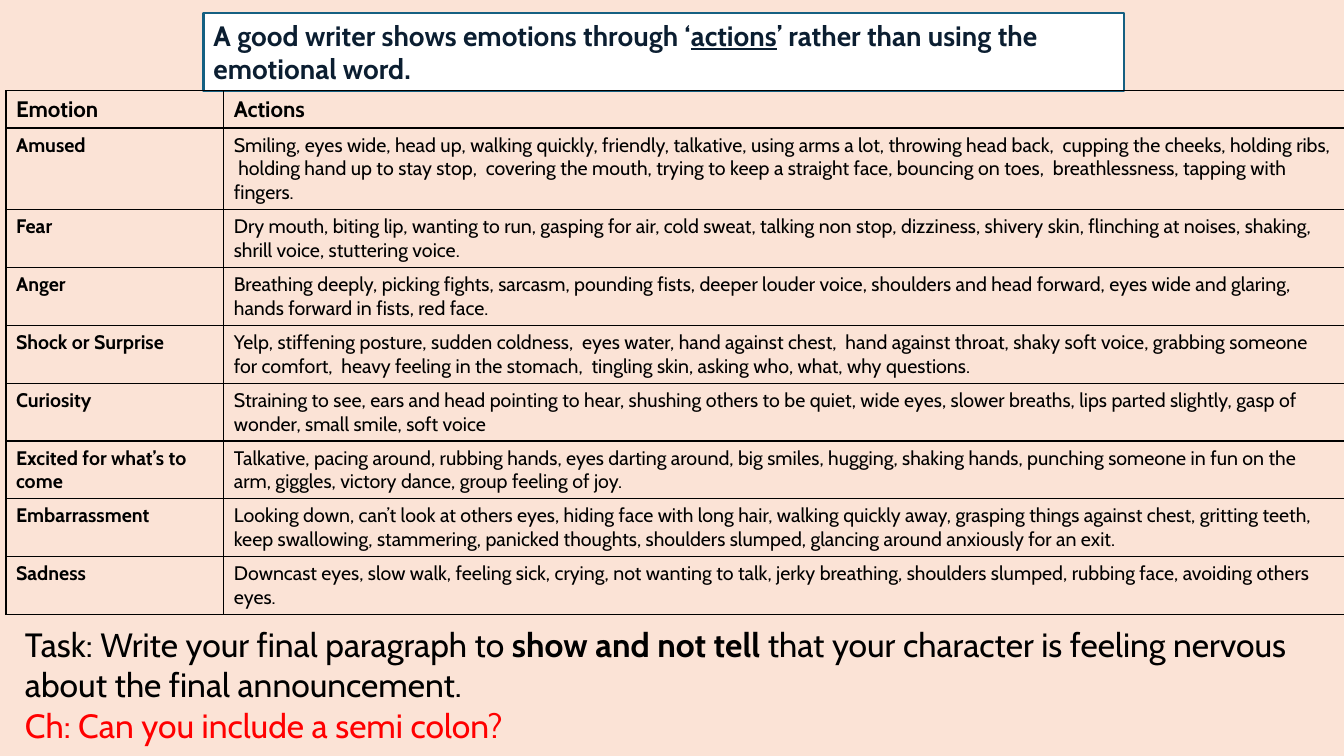
from dataclasses import dataclass

import pptx
import pptx.dml.color
import pptx.enum.shapes
import pptx.enum.text
import pptx.oxml
import pptx.oxml.ns
import pptx.util
from pptx.util import Cm


@dataclass(frozen=True)
class Theme:
    font: str = "Cabin"
    background: str = "FBE3D6"
    banner_fill: str = "FFFFFF"
    banner_line: str = "156082"
    banner_text: str = "0B1E31"
    text: str = "000000"
    challenge: str = "FF0000"
    banner_size: int = 20
    header_size: int = 16
    cell_size: int = 14
    task_size: int = 24


THEME = Theme()

EMOTIONS = [
    ("Amused", "Smiling, eyes wide, head up, walking quickly, friendly, talkative, using arms a lot, "
     "throwing head back,  cupping the cheeks, holding ribs,  holding hand up to stay stop,  covering the mouth, "
     "trying to keep a straight face, bouncing on toes,  breathlessness, tapping with fingers."),
    ("Fear", "Dry mouth, biting lip, wanting to run, gasping for air, cold sweat, talking non stop, dizziness, "
     "shivery skin, flinching at noises, shaking, shrill voice, stuttering voice."),
    ("Anger", "Breathing deeply, picking fights, sarcasm, pounding fists, deeper louder voice, "
     "shoulders and head forward, eyes wide and glaring,  hands forward in fists, red face."),
    ("Shock or Surprise", "Yelp, stiffening posture, sudden coldness,  eyes water, hand against chest,  "
     "hand against throat, shaky soft voice, grabbing someone for comfort,  heavy feeling in the stomach,  "
     "tingling skin, asking who, what, why questions."),
    ("Curiosity", "Straining to see, ears and head pointing to hear, shushing others to be quiet, wide eyes, "
     "slower breaths, lips parted slightly, gasp of wonder, small smile, soft voice"),
    ("Excited for what’s to come", "Talkative, pacing around, rubbing hands, eyes darting around, big smiles, "
     "hugging, shaking hands, punching someone in fun on the arm, giggles, victory dance, group feeling of joy."),
    ("Embarrassment", "Looking down, can’t look at others eyes, hiding face with long hair, walking quickly away, "
     "grasping things against chest, gritting teeth, keep swallowing, stammering, panicked thoughts, "
     "shoulders slumped, glancing around anxiously for an exit."),
    ("Sadness", "Downcast eyes, slow walk, feeling sick, crying, not wanting to talk, jerky breathing, "
     "shoulders slumped, rubbing face, avoiding others eyes."),
]


def rgb(color):
    return pptx.dml.color.RGBColor.from_string(color)


def format_run(run, size, color, bold=False, underline=False):
    run.font.name = THEME.font
    run.font.size = pptx.util.Pt(size)
    run.font.color.rgb = rgb(color)
    run.font.bold = bold
    run.font.underline = underline


def add_run(paragraph, text, size, color, bold=False, underline=False):
    run = paragraph.add_run()
    run.text = text
    format_run(run, size, color, bold, underline)


def draw_banner(slide, left, top, width, height):
    banner = slide.shapes.add_shape(
        pptx.enum.shapes.MSO_SHAPE.RECTANGLE, left, top, width, height)
    banner.shadow.inherit = False
    banner.fill.solid()
    banner.fill.fore_color.rgb = rgb(THEME.banner_fill)
    banner.line.color.rgb = rgb(THEME.banner_line)
    banner.line.width = pptx.util.Pt(1.5)
    frame = banner.text_frame
    frame.word_wrap = True
    frame.vertical_anchor = pptx.enum.text.MSO_ANCHOR.TOP
    paragraph = frame.paragraphs[0]
    paragraph.alignment = pptx.enum.text.PP_ALIGN.LEFT
    for text, underline in [
        ("A good writer shows emotions through ‘", False),
        ("actions", True),
        ("’ rather than using the emotional word.", False),
    ]:
        add_run(paragraph, text, THEME.banner_size, THEME.banner_text, True, underline)


def add_cell_borders(cell):
    properties = cell._tc.get_or_add_tcPr()
    for position, side in enumerate(("lnL", "lnR", "lnT", "lnB")):
        properties.insert(position, pptx.oxml.parse_xml(
            f'<a:{side} {pptx.oxml.ns.nsdecls("a")} w="12700"><a:solidFill>'
            f'<a:srgbClr val="{THEME.text}"/></a:solidFill></a:{side}>'))


def draw_emotion_table(slide, left, top, width, height):
    rows = [("Emotion", "Actions")] + EMOTIONS
    table = slide.shapes.add_table(len(rows), 2, left, top, width, height).table
    table.first_row = False
    table.horz_banding = False
    emotion_width = Cm(5.49)
    table.columns[0].width = emotion_width
    table.columns[1].width = width - emotion_width
    header_height, first_height = Cm(0.91), Cm(2.04)
    other_height = (height - header_height - first_height) // (len(rows) - 2)
    row_heights = [header_height, first_height] + [other_height] * (len(rows) - 2)
    for row_index, (texts, row_height) in enumerate(zip(rows, row_heights)):
        table.rows[row_index].height = row_height
        is_header = row_index == 0
        size = THEME.header_size if is_header else THEME.cell_size
        for column_index, text in enumerate(texts):
            cell = table.cell(row_index, column_index)
            cell.fill.background()
            cell.text_frame.text = text
            format_run(cell.text_frame.paragraphs[0].runs[0], size, THEME.text,
                       is_header or column_index == 0)
            add_cell_borders(cell)


def draw_task(slide, left, top, width, height):
    frame = slide.shapes.add_textbox(left, top, width, height).text_frame
    frame.word_wrap = True
    paragraph = frame.paragraphs[0]
    for text, bold in [
        ("Task: Write your final paragraph to", False),
        (" show and not tell", True),
        (" that your character is feeling nervous about the final announcement.", False),
    ]:
        add_run(paragraph, text, THEME.task_size, THEME.text, bold)
    paragraph.add_line_break()
    add_run(paragraph, "Ch: Can you include a semi colon?", THEME.task_size, THEME.challenge)


def main():
    presentation = pptx.Presentation()
    presentation.slide_width = Cm(33.87)
    presentation.slide_height = Cm(19.05)
    slide = presentation.slides.add_slide(presentation.slide_layouts[6])
    slide.background.fill.solid()
    slide.background.fill.fore_color.rgb = rgb(THEME.background)
    draw_banner(slide, Cm(5.13), Cm(0.33), Cm(23.19), Cm(1.96))
    draw_emotion_table(slide, Cm(0.15), Cm(2.29), Cm(33.76), Cm(13.03))
    draw_task(slide, Cm(0.38), Cm(15.6), Cm(33.1), Cm(3.33))
    presentation.save("out.pptx")


if __name__ == "__main__":
    main()
